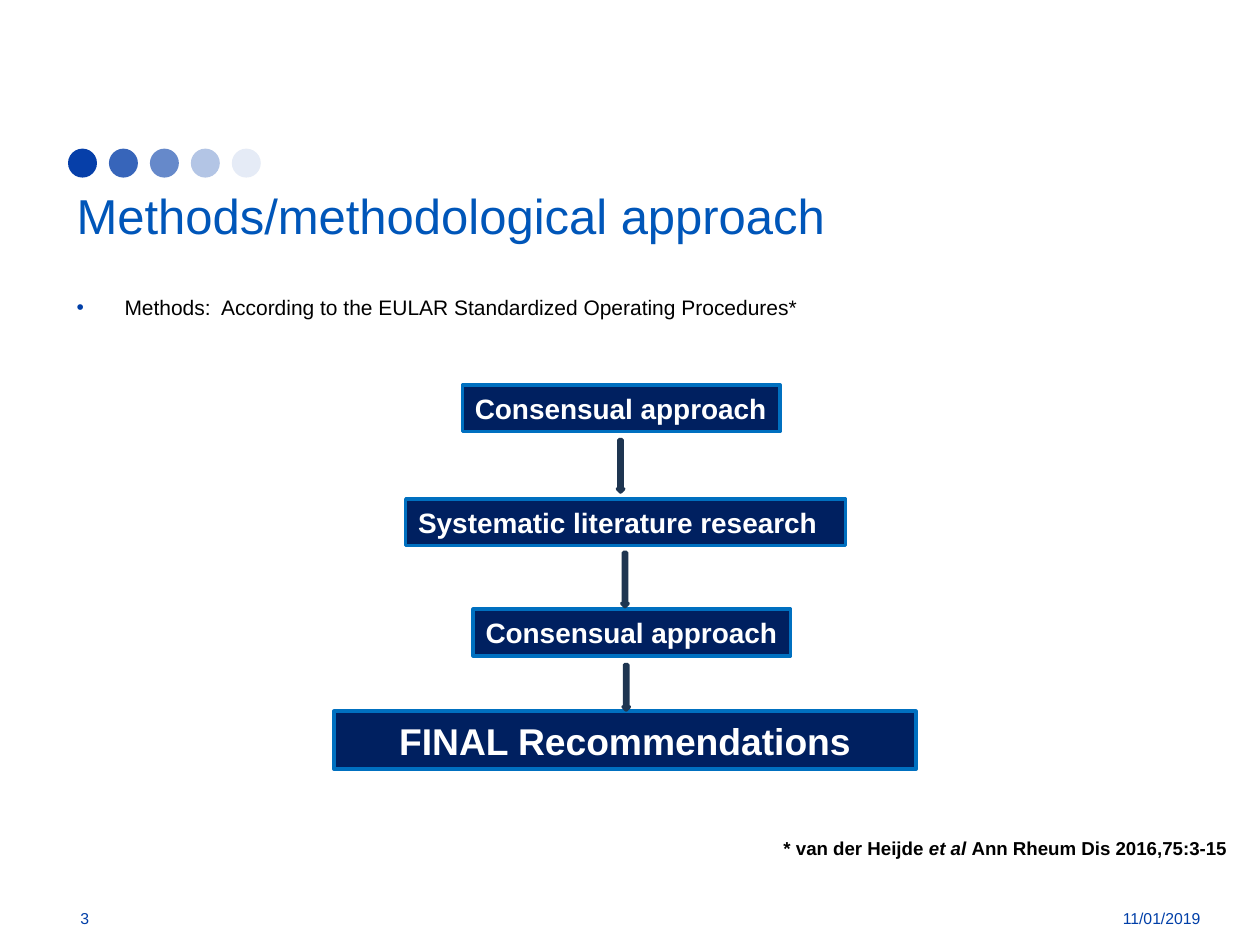
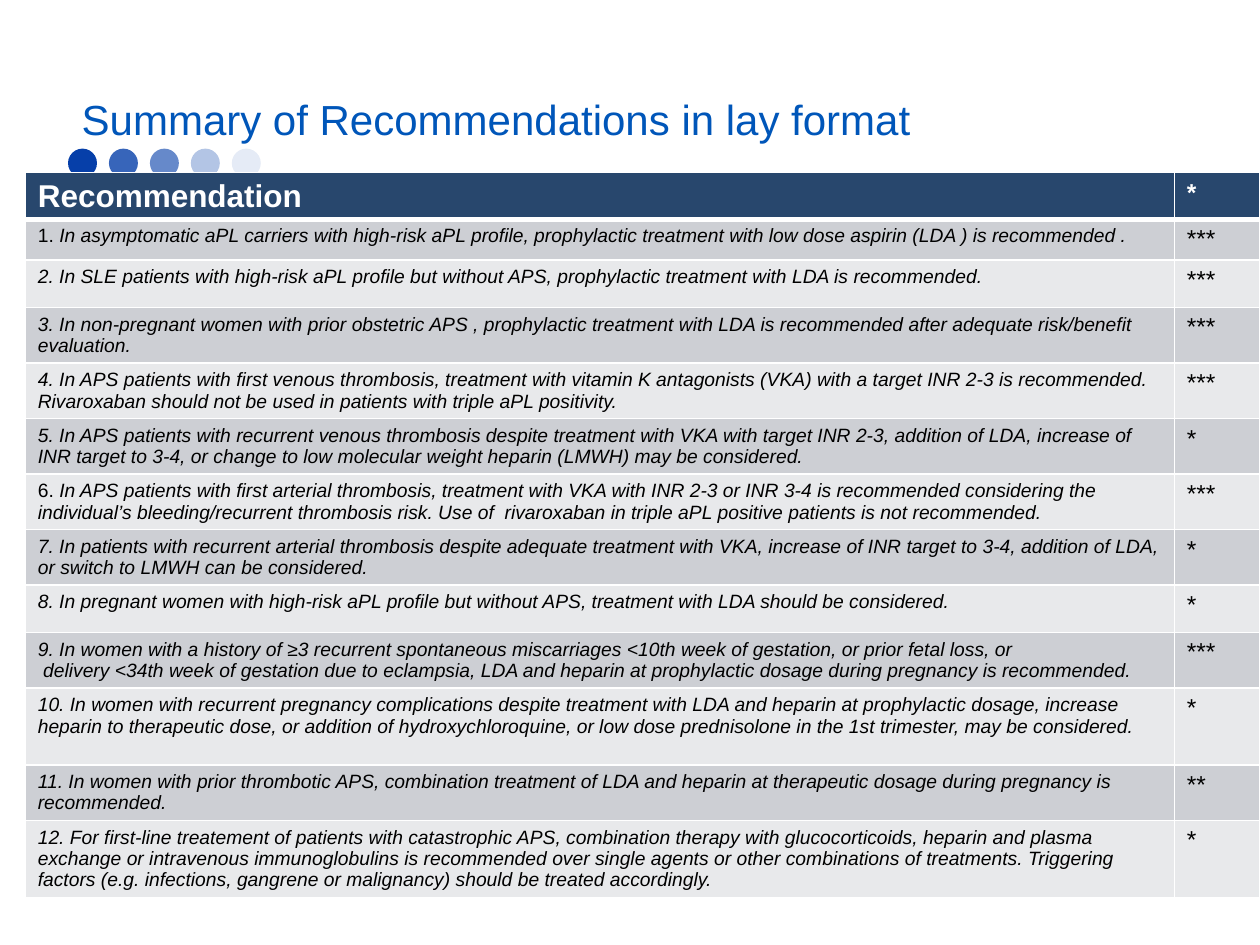
from lxml.etree import SubElement
from pptx import Presentation
from pptx.dml.color import RGBColor
from pptx.enum.shapes import MSO_SHAPE as Shape
from pptx.enum.text import MSO_ANCHOR as Anchor, PP_ALIGN as Align
from pptx.oxml.ns import qn
from pptx.util import Inches, Pt

# Shared colours and type
WHITE = RGBColor(0xFF, 0xFF, 0xFF)
BLACK = RGBColor(0x00, 0x00, 0x00)
DOT_BLUE = RGBColor(0x06, 0x3F, 0xA9)
TITLE_BLUE = RGBColor(0x00, 0x56, 0xB9)
FOOTER_BLUE = RGBColor(0x00, 0x3F, 0xA8)
STEP_NAVY = RGBColor(0x00, 0x20, 0x60)
STEP_EDGE = RGBColor(0x00, 0x70, 0xC0)
SLATE = RGBColor(0x28, 0x47, 0x6D)
ARROW_EDGE = RGBColor(0x1E, 0x35, 0x51)
ROW_DARK = RGBColor(0xCD, 0xCF, 0xD4)
ROW_LIGHT = RGBColor(0xE8, 0xE9, 0xEB)
FONT = "Arial"

deck = Presentation()
deck.slide_width, deck.slide_height = Inches(10), Inches(7.5)

# Placement grid: 100 columns by 75 rows
COL = deck.slide_width / 100
ROW = deck.slide_height / 75


def grid(left, top, width, height):
    """Turn columns and rows into lengths."""
    return int(left * COL), int(top * ROW), int(width * COL), int(height * ROW)


def write(frame, paras, size, color, bold=False, align=Align.LEFT):
    """Fill a text frame; each paragraph is a list of (text, italic) spans."""
    frame.word_wrap = True
    for index, spans in enumerate(paras):
        para = frame.add_paragraph() if index else frame.paragraphs[0]
        para.alignment = align
        for text, italic in spans:
            span = para.add_run()
            span.text = text
            style = {"name": FONT, "size": Pt(size), "bold": bold, "italic": italic}
            for key, value in style.items():
                setattr(span.font, key, value)
            span.font.color.rgb = color


# Both pages start with the row of fading dots
pages = []
for _ in range(2):
    page = deck.slides.add_slide(deck.slide_layouts[6])
    dots = page.shapes.add_group_shape()
    for index, opacity in enumerate([100, 80, 61, 30, 10]):
        dot = dots.shapes.add_shape(Shape.OVAL, *grid(5.4 + 3.25 * index, 11.8, 2.3, 2.3))
        dot.shadow.inherit = False
        dot.fill.solid()
        dot.fill.fore_color.rgb = DOT_BLUE
        dot.line.fill.background()
        tint = dot._element.spPr.find(".//" + qn("a:srgbClr"))
        SubElement(tint, qn("a:alpha"), val=str(opacity * 1000))
    pages.append(page)
methods_page, summary_page = pages

# Titles
titles = [
    (methods_page, "Methods/methodological approach", 5.1, 14.2, 28),
    (summary_page, "Summary of Recommendations in lay format", 5.5, 6.9, 24),
]
for page, title, left, top, size in titles:
    box = page.shapes.add_textbox(*grid(left, top, 91.1, 6.9))
    write(box.text_frame, [[(title, False)]], size, TITLE_BLUE)

# Methods: footer with page number and date
footers = [("3", 5.4, 9.6, Align.LEFT), ("11/01/2019", 82.9, 13.35, Align.RIGHT)]
for text, left, width, align in footers:
    box = methods_page.shapes.add_textbox(*grid(left, 70.9, width, 4))
    box.text_frame.vertical_anchor = Anchor.MIDDLE
    write(box.text_frame, [[(text, False)]], 9, FOOTER_BLUE, align=align)

# Methods: bulleted statement
box = methods_page.shapes.add_textbox(*grid(5.1, 22.9, 91.1, 4))
bullet = box.text_frame.paragraphs[0]._p.get_or_add_pPr()
indent = Inches(0.38)
bullet.set("marL", str(indent))
bullet.set("indent", str(-indent))
SubElement(SubElement(bullet, qn("a:buClr")), qn("a:srgbClr"), val=str(FOOTER_BLUE))
SubElement(bullet, qn("a:buFont"), typeface=FONT)
SubElement(bullet, qn("a:buChar"), char="•")
statement = "Methods:  According to the EULAR Standardized Operating Procedures*"
write(box.text_frame, [[(statement, False)]], 12, BLACK)

# Methods: flow of steps and the arrows between them
flow = methods_page.shapes.add_group_shape()
steps = [
    ("Consensual approach", (36.7, 30.55, 25.2, 3.7), 16, Align.LEFT),
    ("Systematic literature research", (32.2, 39.6, 34.9, 3.7), 16, Align.LEFT),
    ("Consensual approach", (37.55, 48.35, 25.2, 3.7), 16, Align.LEFT),
    ("FINAL Recommendations", (26.5, 56.45, 46.2, 4.6), 21.3, Align.CENTER),
]
for text, place, size, align in steps:
    step = flow.shapes.add_shape(Shape.RECTANGLE, *grid(*place))
    step.shadow.inherit = False
    step.fill.solid()
    step.fill.fore_color.rgb = STEP_NAVY
    step.line.color.rgb = STEP_EDGE
    step.line.width = Pt(2)
    # Left-aligned steps fit their box closely
    step.text_frame.margin_right = Inches(0.05 if align == Align.LEFT else 0.1)
    step.text_frame.vertical_anchor = Anchor.MIDDLE
    write(step.text_frame, [[(text, False)]], size, WHITE, bold=True, align=align)

for left, top, height in [(49, 34.9, 4.15), (49.35, 43.85, 4.3), (49.45, 52.75, 3.6)]:
    arrow = flow.shapes.add_shape(Shape.DOWN_ARROW, *grid(left, top, 0.5, height))
    arrow.shadow.inherit = False
    arrow.fill.solid()
    arrow.fill.fore_color.rgb = SLATE
    arrow.line.color.rgb = ARROW_EDGE
    arrow.line.width = Pt(2)

# Methods: citation
box = methods_page.shapes.add_textbox(*grid(61.2, 65.95, 37.6, 2.8))
citation = [("* van der Heijde ", False), ("et al ", True), ("Ann Rheum Dis 2016,75:3-15", False)]
write(box.text_frame, [citation], 10.7, BLACK, bold=True)
box.text_frame.word_wrap = False

# Summary: paragraphs of each recommendation, its stars and its row height
recommendations = [
    ([[("1.", False),
       (" In asymptomatic aPL carriers with high-risk aPL profile, prophylactic treatment "
        "with low dose aspirin (LDA ) is recommended .", True)]], "***", 3.25),
    ([[("2. In SLE patients with high-risk aPL profile but without APS, prophylactic treatment "
        "with LDA is recommended.", True)]], "***", 3.75),
    ([[("3. In non-pregnant women with prior obstetric APS , prophylactic treatment with LDA "
        "is recommended after adequate risk/benefit evaluation.", True)]], "***", 4.41),
    ([[("4. In APS patients with first venous thrombosis, treatment with vitamin K antagonists "
        "(VKA) with a target INR 2-3 is recommended. Rivaroxaban should not be used in patients "
        "with triple aPL positivity.", True)]], "***", 4.41),
    ([[("5. In APS patients with recurrent venous thrombosis despite treatment with VKA with "
        "target INR 2-3, addition of LDA, increase of INR target to 3-4, or change to low "
        "molecular weight heparin (LMWH) may be considered.", True)]], "*", 4.41),
    ([[("6. ", False),
       ("In APS patients with first arterial thrombosis, treatment with VKA with INR 2-3 or "
        "INR 3-4 is recommended considering the individual’s bleeding/recurrent thrombosis "
        "risk. Use of  rivaroxaban in triple aPL positive patients is not recommended.",
        True)]], "***", 4.41),
    ([[("7. In patients with recurrent arterial thrombosis despite adequate treatment with VKA, "
        "increase of INR target to 3-4, addition of LDA, or switch to LMWH can be considered.",
        True)]], "*", 4.41),
    ([[("8. In pregnant women with high-risk aPL profile but without APS, treatment with LDA "
        "should be considered.", True)]], "*", 3.75),
    ([[("9. In women with a history of ≥3 recurrent spontaneous miscarriages <10th week of "
        "gestation, or prior fetal loss, or", True)],
      [(" delivery <34th week of gestation due to eclampsia, LDA and heparin at prophylactic "
        "dosage during pregnancy is recommended.", True)]], "***", 4.41),
    ([[("10. In women with recurrent pregnancy complications despite treatment with LDA and "
        "heparin at prophylactic dosage, increase heparin to therapeutic dose, or addition of "
        "hydroxychloroquine, or low dose prednisolone in the 1st trimester, may be considered.",
        True)]], "*", 6.1),
    ([[("11. In women with prior thrombotic APS, combination treatment of LDA and heparin at "
        "therapeutic dosage during pregnancy is recommended.", True)]], "**", 4.41),
    ([[("12. For first-line treatement of patients with catastrophic APS, combination therapy "
        "with glucocorticoids, heparin and plasma exchange or intravenous immunoglobulins is "
        "recommended over single agents or other combinations of treatments. Triggering factors "
        "(e.g. infections, gangrene or malignancy) should be treated accordingly.",
        True)]], "*", 6.1),
]
heading = ([[("Recommendation", False)]], "*", 3.7)
lines = [heading] + recommendations

# Summary: table
total = sum(height for _, _, height in lines)
table = summary_page.shapes.add_table(len(lines), 2, *grid(2, 13.7, 98, total)).table
table.horz_banding = False
for column, width in zip(table.columns, [91.2, 6.8]):
    column.width = int(width * COL)

for index, (paras, stars, height) in enumerate(lines):
    is_head = index == 0
    table.rows[index].height = int(height * ROW)
    color = WHITE if is_head else BLACK
    fill = SLATE if is_head else ROW_DARK if index % 2 else ROW_LIGHT
    text_cell, star_cell = table.rows[index].cells
    write(text_cell.text_frame, paras, 18 if is_head else 11, color, bold=is_head)
    write(star_cell.text_frame, [[(stars, False)]], 14, color, bold=is_head)
    for cell in (text_cell, star_cell):
        cell.margin_bottom = Inches(0.01)
        # Borders precede the fill in the cell's properties
        props = cell._tc.get_or_add_tcPr()
        for side in "LRTB":
            thick = (is_head and side == "B") or (index == 1 and side == "T")
            edge = SubElement(props, qn("a:ln" + side), w=str(Pt(3 if thick else 1)))
            SubElement(SubElement(edge, qn("a:solidFill")), qn("a:srgbClr"), val=str(WHITE))
        cell.fill.solid()
        cell.fill.fore_color.rgb = fill

deck.save("out.pptx")
